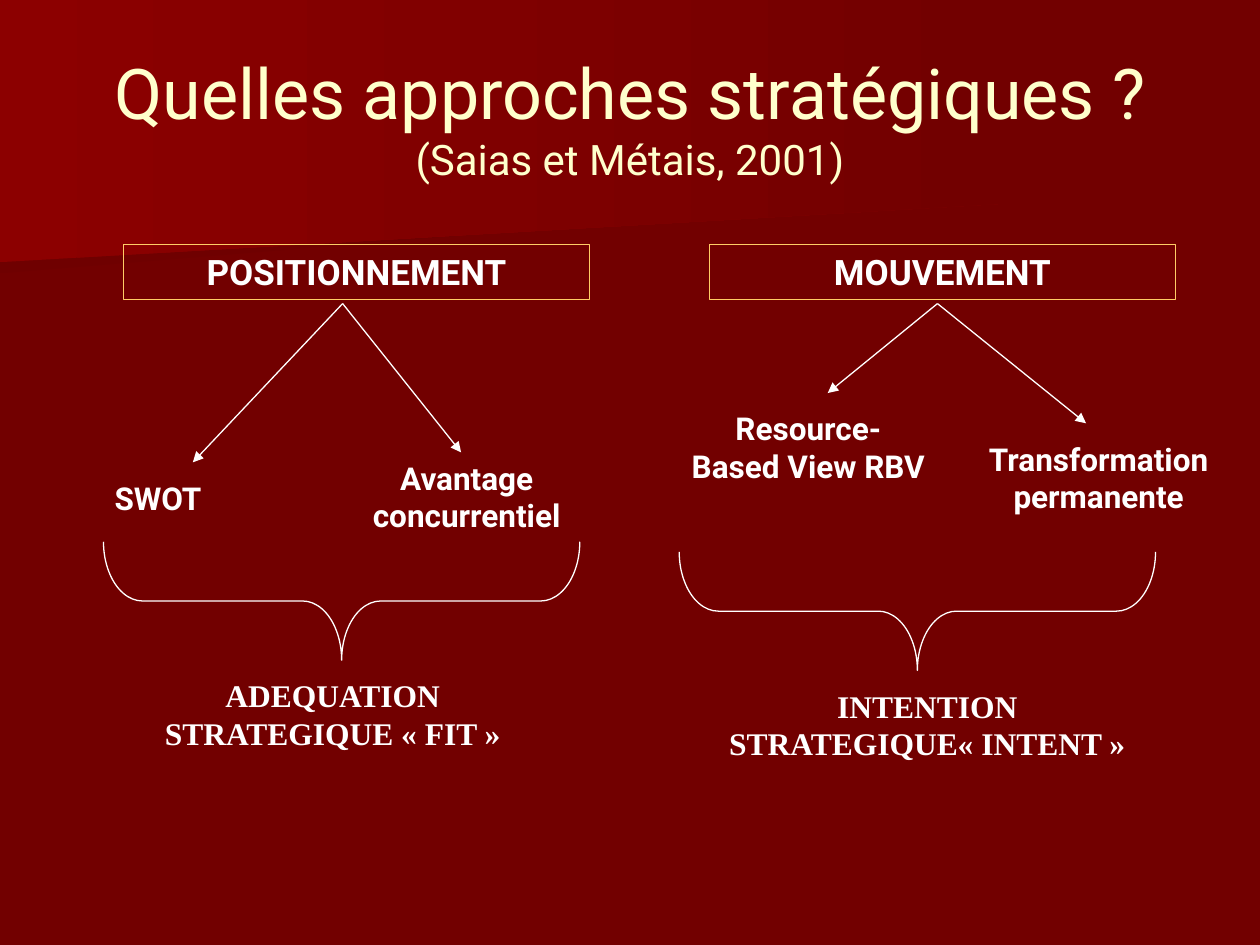
from pptx import Presentation
from pptx.dml.color import RGBColor
from pptx.enum.shapes import MSO_CONNECTOR, MSO_SHAPE
from pptx.enum.text import MSO_ANCHOR, MSO_AUTO_SIZE, PP_ALIGN
from pptx.oxml.ns import qn
from pptx.util import Pt
from lxml import etree

STRAIGHT = MSO_CONNECTOR.STRAIGHT
RECTANGLE, BRACE = MSO_SHAPE.RECTANGLE, MSO_SHAPE.RIGHT_BRACE
TOP, MIDDLE = MSO_ANCHOR.TOP, MSO_ANCHOR.MIDDLE
NO_AUTOSIZE = MSO_AUTO_SIZE.NONE
CENTER = PP_ALIGN.CENTER

COLORS = {"background": "720000", "shade": "6F0000", "glow": "8C0000",
          "title": "FFFFCC", "frame": "FFCC66", "white": "FFFFFF"}
SANS, SERIF = "Roboto", "Times New Roman"
TITLE_LINES = [("Quelles approches stratégiques ?", 40), ("(Saias et Métais, 2001)", 24)]
TITLE_AREA = (36, 21.6, 648, 90)

BACKDROP = [
    ("shade", [(560.2, 110.2), (0, 156.2), (0, 72.7), (560.9, 72.7), (560.2, 92.2)]),
    ("glow", [(570.2, 116.6), (0, 149.8), (0, 0), (570.2, 0)]),
]
APPROACHES = [
    {"heading": ("POSITIONNEMENT", (70.6, 139.7, 266.4, 31.7)),
     "fork": (195.8, 173.5),
     "branches": [("SWOT", (19.4, 270, 141.8, 28.8), (110.2, 264.2)),
                  ("Avantage concurrentiel", (195.8, 258.5, 141.8, 50.4), (263.5, 258.5))],
     "brace": (59.1, 309.6),
     "outcome": ("ADEQUATION STRATEGIQUE « FIT »", (59.8, 383, 260.6, 72))},
    {"heading": ("MOUVEMENT", (405.4, 139.7, 266.4, 31.7)),
     "fork": (535.7, 173.5),
     "branches": [("Resource-Based View RBV", (388.1, 230.4, 147.6, 72), (473, 224.6)),
                  ("Transformation permanente", (535.7, 247.7, 184.3, 50.4), (620.6, 241.9))],
     "brace": (388.1, 315.4),
     "outcome": ("INTENTION STRATEGIQUE« INTENT »", (399.6, 388.8, 260.6, 72))},
]
BRACE_SPAN, BRACE_DEPTH = 272.2, 67.7


def rgb(name):
    return RGBColor.from_string(COLORS[name])


def apply(target, values):
    for key, value in values.items():
        setattr(target, key, value)


def style_font(font, size, color, face=SANS, bold=False):
    apply(font, {"name": face, "size": Pt(size), "bold": bold})
    font.color.rgb = rgb(color)


def outline(part, color):
    part.line.color.rgb = rgb(color)
    part.line.width = Pt(0.75)


def write(part, text, size, face=SANS):
    frame = part.text_frame
    apply(frame, {"word_wrap": True, "auto_size": NO_AUTOSIZE, "vertical_anchor": TOP})
    paragraph = frame.paragraphs[0]
    paragraph.alignment = CENTER
    run = paragraph.add_run()
    run.text = text
    style_font(run.font, size, "white", face, True)


def add_label(slide, text, area, face=SANS):
    write(slide.shapes.add_textbox(*map(Pt, area)), text, 18, face)


def add_open_shape(slide, preset, area, color):
    shape = slide.shapes.add_shape(preset, *map(Pt, area))
    shape.shadow.inherit = False
    shape.fill.background()
    outline(shape, color)
    return shape


def add_arrow(slide, start, end):
    arrow = slide.shapes.add_connector(STRAIGHT, *map(Pt, start + end))
    outline(arrow, "white")
    properties = arrow._element.spPr
    etree.SubElement(properties.get_or_add_ln(), qn("a:tailEnd"), type="triangle")
    etree.SubElement(properties, qn("a:effectLst"))


def add_backdrop(slide):
    slide.background.fill.solid()
    slide.background.fill.fore_color.rgb = rgb("background")
    for color, points in BACKDROP:
        corners = [(Pt(x), Pt(y)) for x, y in points]
        builder = slide.shapes.build_freeform(*corners[0])
        builder.add_line_segments(corners[1:], close=True)
        band = builder.convert_to_shape()
        band.shadow.inherit = False
        band.line.fill.background()
        band.fill.gradient()
        band.fill.gradient_angle = 0
        for stop, name in zip(band.fill.gradient_stops, (color, "background")):
            stop.color.rgb = rgb(name)


def add_title(slide):
    title = slide.shapes.title
    apply(title, dict(zip(("left", "top", "width", "height"), map(Pt, TITLE_AREA))))
    apply(title.text_frame, {"word_wrap": True, "auto_size": NO_AUTOSIZE,
                             "vertical_anchor": MIDDLE})
    paragraph = title.text_frame.paragraphs[0]
    paragraph.alignment = CENTER
    for index, (text, size) in enumerate(TITLE_LINES):
        if index:
            paragraph.add_line_break()
        run = paragraph.add_run()
        run.text = text
        style_font(run.font, size, "title")
    slide.shapes._spTree.append(title._element)


def add_approach(slide, approach):
    heading, area = approach["heading"]
    write(add_open_shape(slide, RECTANGLE, area, "frame"), heading, 20)
    for text, area, tip in approach["branches"]:
        add_label(slide, text, area)
        add_arrow(slide, approach["fork"], tip)
    left, top = approach["brace"]
    shift = (BRACE_SPAN - BRACE_DEPTH) / 2
    brace = add_open_shape(slide, BRACE, (left + shift, top - shift, BRACE_DEPTH, BRACE_SPAN),
                           "white")
    brace.rotation = 90
    brace.adjustments[0] = 0.33
    add_label(slide, *approach["outcome"], SERIF)


def main():
    """Build the slide on strategic approaches."""
    deck = Presentation()
    apply(deck, {"slide_width": Pt(720), "slide_height": Pt(540)})
    slide = deck.slides.add_slide(deck.slide_layouts[5])
    add_backdrop(slide)
    add_title(slide)
    for approach in APPROACHES:
        add_approach(slide, approach)
    deck.save("out.pptx")


if __name__ == "__main__":
    main()
